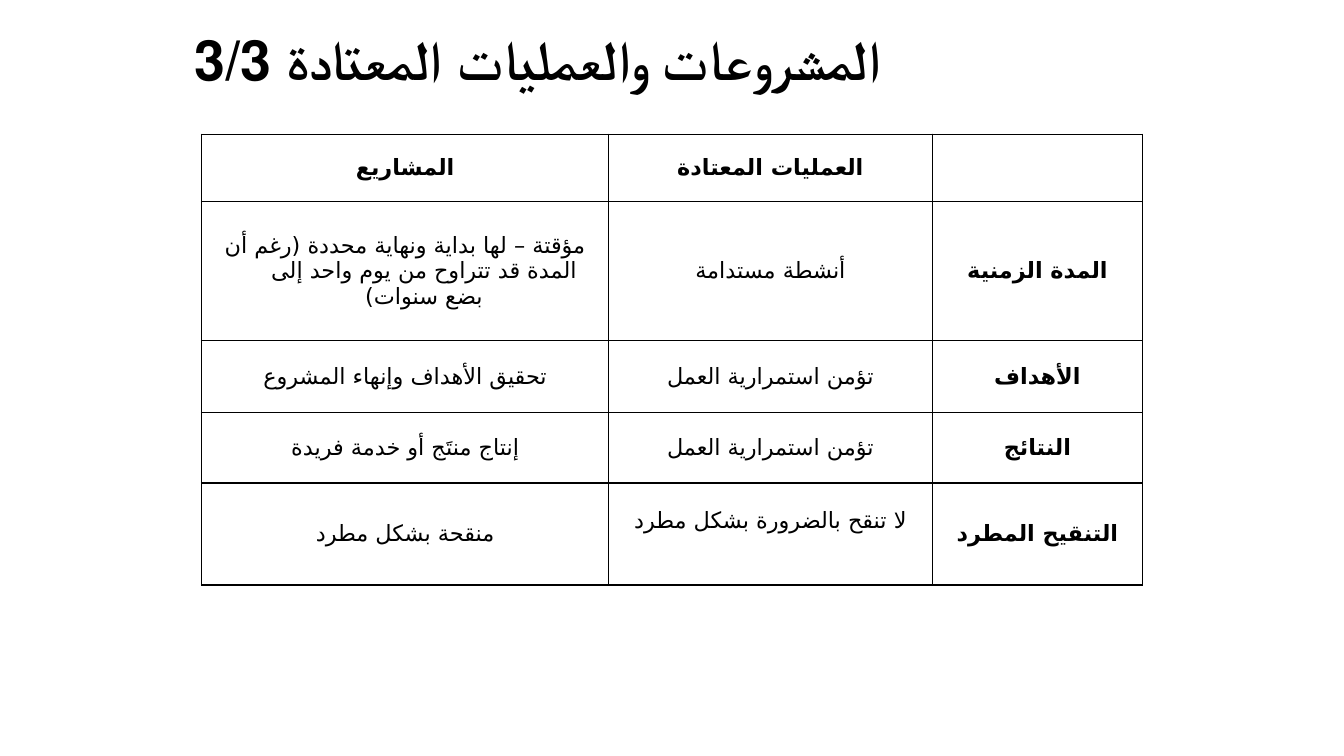
from lxml import etree
from pptx import Presentation
from pptx.dml.color import RGBColor
from pptx.enum.text import MSO_ANCHOR, PP_ALIGN
from pptx.oxml.ns import qn
from pptx.util import Cm, Pt

CENTER, LEFT = PP_ALIGN.CENTER, PP_ALIGN.LEFT
MIDDLE = MSO_ANCHOR.MIDDLE
BLACK = "000000"
FONT = "DejaVu Sans"

TITLE = "المشروعات والعمليات المعتادة 3/3"
BODY = [
    ["المشاريع", "العمليات المعتادة"],
    ["مؤقتة – لها بداية ونهاية محددة (رغم أن المدة قد تتراوح من يوم واحد إلى بضع سنوات)",
     "أنشطة مستدامة"],
    ["تحقيق الأهداف وإنهاء المشروع", "تؤمن استمرارية العمل"],
    ["إنتاج منتَج أو خدمة فريدة", "تؤمن استمرارية العمل"],
    ["منقحة بشكل مطرد", "لا تنقح بالضرورة بشكل مطرد"],
]
LABELS = [[""], ["المدة الزمنية"], ["الأهداف"], ["النتائج"], ["التنقيح المطرد"]]

# Table measures in centimetres
X, Y = 5.08, 3.38
ROWS = [1.7, 3.51, 1.8, 1.78, 2.57]
BODY_COLS = [10.26, 8.15]
LABEL_COLS = [5.31]
INDENT = Cm(0.95)


def color(code):
    return RGBColor.from_string(code)


def style(run, name, size, bold):
    font = run.font
    font.name, font.size, font.bold = name, Pt(size), bold
    font.color.rgb = color(BLACK)


def add_title(slide, text):
    box = slide.shapes.add_textbox(Cm(4.65), Cm(0.84), Cm(20.52), Cm(1.45))
    frame = box.text_frame
    frame.word_wrap = True
    frame.vertical_anchor = MIDDLE
    frame.text = text
    para = frame.paragraphs[0]
    para.alignment = LEFT
    para.line_spacing = 0.9
    style(para.runs[0], "Calibri", 39.6, True)


def add_border(cell):
    props = cell._tc.get_or_add_tcPr()
    for side in ("lnL", "lnR", "lnT", "lnB"):
        line = etree.SubElement(props, qn("a:" + side), w=str(Pt(1)))
        fill = etree.SubElement(line, qn("a:solidFill"))
        etree.SubElement(fill, qn("a:srgbClr"), val=BLACK)


def fill_cell(cell, text, bold):
    add_border(cell)
    cell.fill.background()
    cell.vertical_anchor = MIDDLE
    if not text:
        return
    cell.text_frame.text = text
    para = cell.text_frame.paragraphs[0]
    para.alignment = CENTER
    # Hanging indent
    props = para._p.get_or_add_pPr()
    props.set("marL", str(INDENT))
    props.set("indent", str(-INDENT))
    run = para.runs[0]
    style(run, FONT, 16, bold)
    # Arabic letters use the complex-script font
    etree.SubElement(run.font._element, qn("a:cs"), typeface=FONT)


def add_grid(slide, left, cols, data, labels=False):
    frame = slide.shapes.add_table(len(data), len(cols), Cm(left), Cm(Y),
                                   Cm(sum(cols)), Cm(sum(ROWS)))
    table = frame.table
    table.first_row = table.horz_banding = False
    for col, width in zip(table.columns, cols):
        col.width = Cm(width)
    for r, (height, texts) in enumerate(zip(ROWS, data)):
        table.rows[r].height = Cm(height)
        for c, text in enumerate(texts):
            fill_cell(table.cell(r, c), text, labels or r == 0)
    return table


def main():
    prs = Presentation()
    prs.slide_width, prs.slide_height = Cm(33.87), Cm(19.05)
    slide = prs.slides.add_slide(prs.slide_layouts[6])

    # Heading
    add_title(slide, TITLE)

    # Comparison, with its last cell set a little higher
    table = add_grid(slide, X, BODY_COLS, BODY)
    table.cell(len(BODY) - 1, 1).margin_bottom = Cm(0.8)

    # Row labels on the right
    add_grid(slide, X + sum(BODY_COLS), LABEL_COLS, LABELS, labels=True)

    prs.save("out.pptx")


if __name__ == "__main__":
    main()
